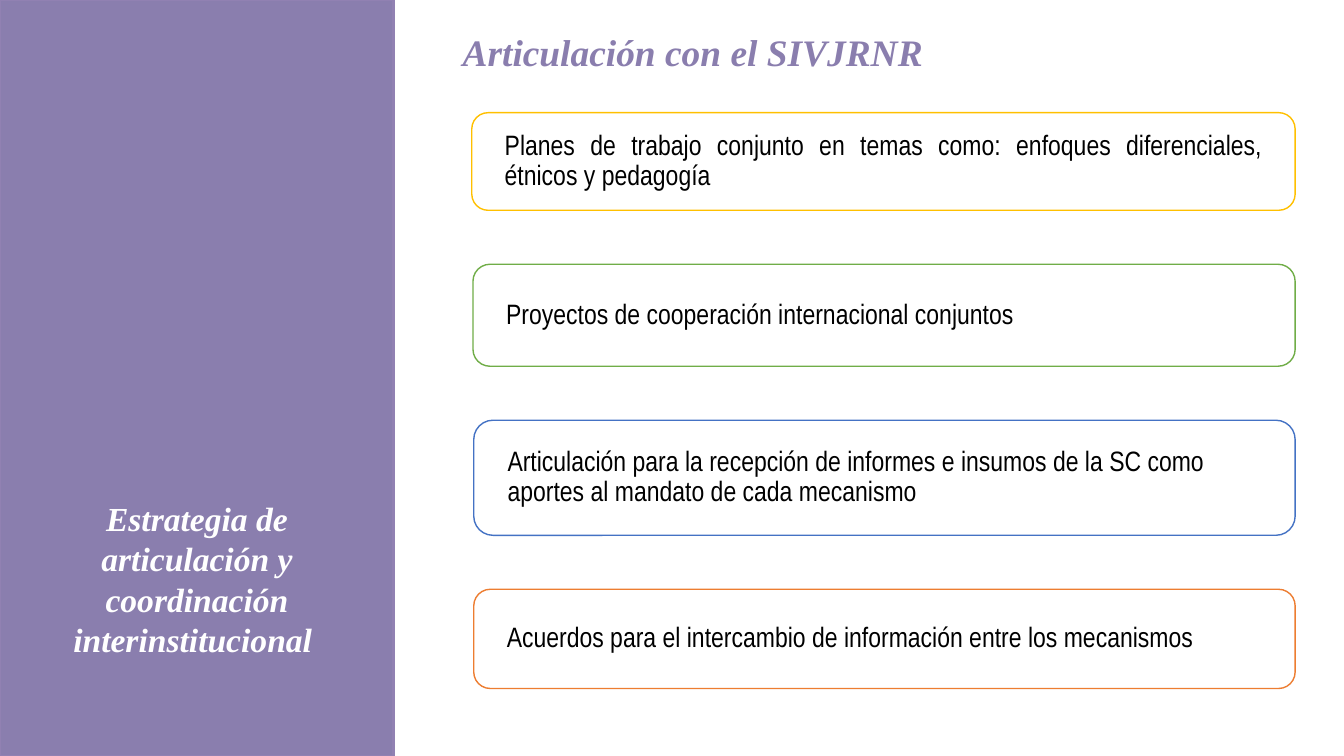
from pptx import Presentation
from pptx.dml.color import RGBColor
from pptx.enum.shapes import MSO_SHAPE
from pptx.enum.text import MSO_ANCHOR, PP_ALIGN
from pptx.util import Cm, Pt

RECT, ROUNDED = MSO_SHAPE.RECTANGLE, MSO_SHAPE.ROUNDED_RECTANGLE
MIDDLE = MSO_ANCHOR.MIDDLE
LEFT, CENTER, JUSTIFY = PP_ALIGN.LEFT, PP_ALIGN.CENTER, PP_ALIGN.JUSTIFY

WHITE = RGBColor(0xFF, 0xFF, 0xFF)
BLACK = RGBColor(0x00, 0x00, 0x00)
PURPLE = RGBColor(0x8A, 0x7E, 0xAE)
PURPLE_EDGE = RGBColor(0x91, 0x81, 0xB2)
YELLOW = RGBColor(0xFF, 0xC0, 0x00)
GREEN = RGBColor(0x70, 0xAD, 0x47)
BLUE = RGBColor(0x44, 0x72, 0xC4)
ORANGE = RGBColor(0xED, 0x7D, 0x31)

prs = Presentation()
prs.slide_width, prs.slide_height = Cm(33.87), Cm(19.05)
s = prs.slides.add_slide(prs.slide_layouts[6])


def add_box(kind, left, top, width, height, fill, line, line_width):
    sp = s.shapes.add_shape(kind, Cm(left), Cm(top), Cm(width), Cm(height))
    sp.shadow.inherit = False
    sp.fill.solid()
    sp.fill.fore_color.rgb = fill
    sp.line.color.rgb = line
    sp.line.width = Pt(line_width)
    return sp


def write(sp, text, font, size, color, align, inset_x, inset_y, heading=False):
    tf = sp.text_frame
    tf.word_wrap = True
    tf.vertical_anchor = MIDDLE
    tf.margin_left = tf.margin_right = Cm(inset_x)
    tf.margin_top = tf.margin_bottom = Cm(inset_y)
    p = tf.paragraphs[0]
    p.text = text
    p.alignment = align
    r = p.runs[0]
    r.font.name = font
    r.font.size = Pt(size)
    r.font.color.rgb = color
    r.font.bold = r.font.italic = heading
    return p


# Side panel
add_box(RECT, 0, 0, 9.91, 19.05, PURPLE, PURPLE_EDGE, 2)

# Headings
headings = [
    ("Articulación con el SIVJRNR", 11.33, 0.43, 15.9, 1.75, 26.7, PURPLE, LEFT),
    ("Estrategia de articulación y coordinación interinstitucional ",
     1.5, 13.69, 6.93, 1.78, 24, WHITE, CENTER),
]
for text, left, top, width, height, size, color, align in headings:
    sp = s.shapes.add_textbox(Cm(left), Cm(top), Cm(width), Cm(height))
    write(sp, text, "Times New Roman", size, color, align, 0.33, 0.18, heading=True)

# Cards, stacked with an equal gap
CARD_RIGHT, GAP = 32.64, 1.36
cards = [
    ("Planes de trabajo conjunto en temas como: enfoques diferenciales, étnicos y pedagogía",
     11.89, 2.46, YELLOW, JUSTIFY),
    ("Proyectos de cooperación internacional conjuntos", 11.92, 2.57, GREEN, LEFT),
    ("Articulación para la recepción de informes e insumos de la SC como "
     "aportes al mandato de cada mecanismo", 11.94, 2.9, BLUE, LEFT),
    ("Acuerdos para el intercambio de información entre los mecanismos",
     11.94, 2.5, ORANGE, LEFT),
]
top = 2.84
for text, left, height, color, align in cards:
    sp = add_box(ROUNDED, left, top, CARD_RIGHT - left, height, WHITE, color, 1)
    p = write(sp, text, "Arial Narrow", 20, BLACK, align, 0.71, 0)
    p.line_spacing = 0.9
    top += height + GAP

prs.save("out.pptx")
